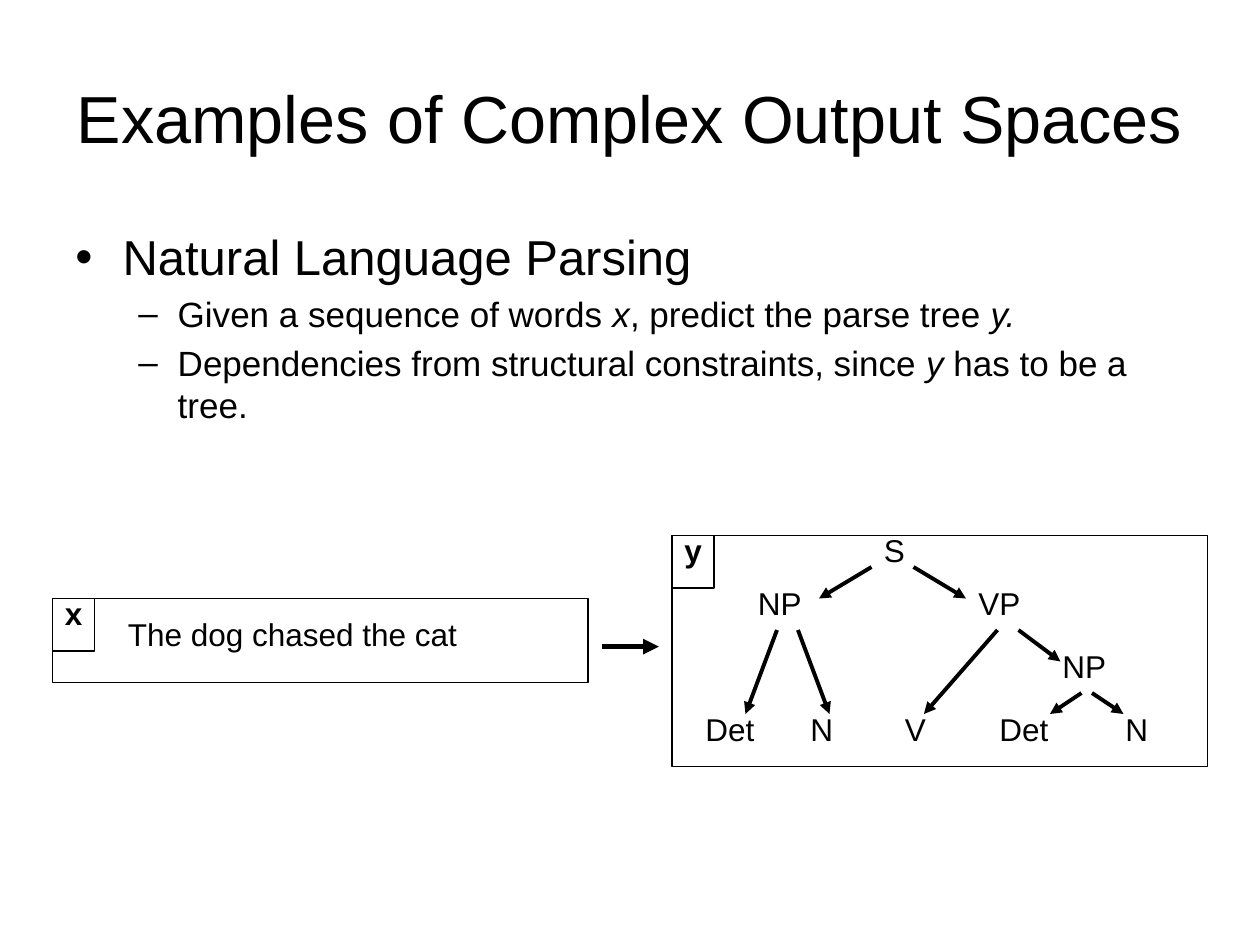
from dataclasses import dataclass

from lxml import etree
from pptx import Presentation
from pptx import util as u
from pptx.dml.color import RGBColor
from pptx.enum import shapes, text
from pptx.oxml.ns import qn

Pt = u.Pt


@dataclass(frozen=True)
class Theme:
    font: str = "Arial"
    ink: RGBColor = RGBColor(0, 0, 0)
    paper: RGBColor = RGBColor(255, 255, 255)
    title: float = 38
    heading: float = 28
    point: float = 20
    label: float = 18
    outline: float = 0.75
    edge: float = 2.25
    flow: float = 3


def write_run(paragraph, words, theme, size, bold=False, italic=False):
    run = paragraph.add_run()
    run.text = words
    font = run.font
    font.name, font.size, font.bold, font.italic = theme.font, Pt(size), bold, italic
    font.color.rgb = theme.ink


class Canvas:
    def __init__(self, slide, theme):
        self.slide = slide
        self.theme = theme
        self.shapes = slide.shapes

    def start_group(self):
        self.shapes = self.slide.shapes.add_group_shape().shapes

    def end_group(self):
        self.shapes = self.slide.shapes

    def text_box(self, left, top, width, height, wrap=True):
        frame = self.shapes.add_textbox(Pt(left), Pt(top), Pt(width), Pt(height)).text_frame
        frame.word_wrap = wrap
        frame.auto_size = text.MSO_AUTO_SIZE.NONE if wrap else text.MSO_AUTO_SIZE.SHAPE_TO_FIT_TEXT
        return frame

    def title(self, words, *box):
        frame = self.text_box(*box)
        frame.vertical_anchor = text.MSO_ANCHOR.MIDDLE
        paragraph = frame.paragraphs[0]
        paragraph.alignment = text.PP_ALIGN.CENTER
        write_run(paragraph, words, self.theme, self.theme.title)

    def label(self, words, left, top, width, height=36, bold=False):
        frame = self.text_box(left, top, width, height, wrap=False)
        write_run(frame.paragraphs[0], words, self.theme, self.theme.label, bold=bold)

    def bullet(self, paragraph, pieces, level=0):
        """Write pieces of text; every second piece is italic."""
        size = self.theme.point if level else self.theme.heading
        margin, hang, mark = (58.5, 22.5, "–") if level else (27, 27, "•")
        paragraph.level = level
        paragraph.space_before = Pt(size * 0.2)
        properties = paragraph._p.get_or_add_pPr()
        properties.set("marL", str(Pt(margin)))
        properties.set("indent", str(-Pt(hang)))
        etree.SubElement(properties, qn("a:buFont"), typeface=self.theme.font)
        etree.SubElement(properties, qn("a:buChar"), char=mark)
        for index, piece in enumerate(pieces):
            write_run(paragraph, piece, self.theme, size, italic=index % 2 == 1)

    def box(self, left, top, width, height, filled=False):
        shape = self.shapes.add_shape(
            shapes.MSO_SHAPE.RECTANGLE, Pt(left), Pt(top), Pt(width), Pt(height))
        shape.shadow.inherit = False
        shape.line.color.rgb = self.theme.ink
        shape.line.width = Pt(self.theme.outline)
        if filled:
            shape.fill.solid()
            shape.fill.fore_color.rgb = self.theme.paper
            color = shape._element.spPr.find(".//" + qn("a:solidFill"))[0]
            etree.SubElement(color, qn("a:alpha"), val="50000")
        else:
            shape.fill.background()

    def tag(self, letter, left, top):
        """Put a boxed letter in the top left corner of a panel."""
        self.label(letter, left, top - 6, 26.5, bold=True)
        self.box(left, top, 24, 30)

    def arrow(self, x1, y1, x2, y2, width):
        connector = self.shapes.add_connector(
            shapes.MSO_CONNECTOR.STRAIGHT, Pt(x1), Pt(y1), Pt(x2), Pt(y2))
        connector.line.color.rgb = self.theme.ink
        connector.line.width = Pt(width)
        etree.SubElement(connector.line._get_or_add_ln(), qn("a:tailEnd"), type="triangle")
        etree.SubElement(connector._element.spPr, qn("a:effectLst"))


BULLETS = [
    (0, ["Natural Language Parsing"]),
    (1, ["Given a sequence of words ", "x", ", predict the parse tree ", "y."]),
    (1, ["Dependencies from structural constraints, since ", "y", " has to be a tree."]),
]
LABEL_WIDTHS = {"S": 28, "NP": 45, "VP": 45, "Det": 42.5, "N": 32, "V": 32}
# Rows of the parse tree: top, then (label, left)
TREE_ROWS = [
    (300, [("S", 498)]),
    (330, [("NP", 426), ("VP", 552)]),
    (366, [("NP", 600)]),
    (402, [("Det", 396), ("N", 456), ("V", 510), ("Det", 564), ("N", 636)]),
]
# Edges by level: start height, end height, then (start x, end x)
TREE_EDGES = [
    (324, 342, [(498, 468), (522, 552)]),
    (360, 378, [(582, 606)]),
    (360, 408, [(444, 426), (456, 474), (570, 528)]),
    (396, 408, [(618, 600), (624, 642)]),
]


def main():
    presentation = Presentation()
    presentation.slide_width, presentation.slide_height = Pt(720), Pt(540)
    theme = Theme()
    canvas = Canvas(presentation.slides.add_slide(presentation.slide_layouts[6]), theme)

    # Title and bullets
    canvas.title("Examples of Complex Output Spaces", 36, 21.6, 648, 90)
    body = canvas.text_box(36, 126, 648, 356.4)
    for index, (level, pieces) in enumerate(BULLETS):
        paragraph = body.add_paragraph() if index else body.paragraphs[0]
        canvas.bullet(paragraph, pieces, level)

    # Input sentence
    canvas.start_group()
    canvas.box(30, 342, 306, 48, filled=True)
    canvas.label("The dog chased the cat", 66, 348, 234)
    canvas.tag("x", 30, 342)

    # Output parse tree
    canvas.start_group()
    canvas.box(384, 306, 306, 132, filled=True)
    for top, nodes in TREE_ROWS:
        for words, left in nodes:
            canvas.label(words, left, top, LABEL_WIDTHS[words])
    for start, end, edges in TREE_EDGES:
        for x1, x2 in edges:
            canvas.arrow(x1, start, x2, end, theme.edge)
    canvas.tag("y", 384, 306)
    canvas.end_group()

    # Arrow from input to output
    canvas.arrow(344, 369.5, 376.5, 369.5, theme.flow)

    presentation.save("out.pptx")


if __name__ == "__main__":
    main()
